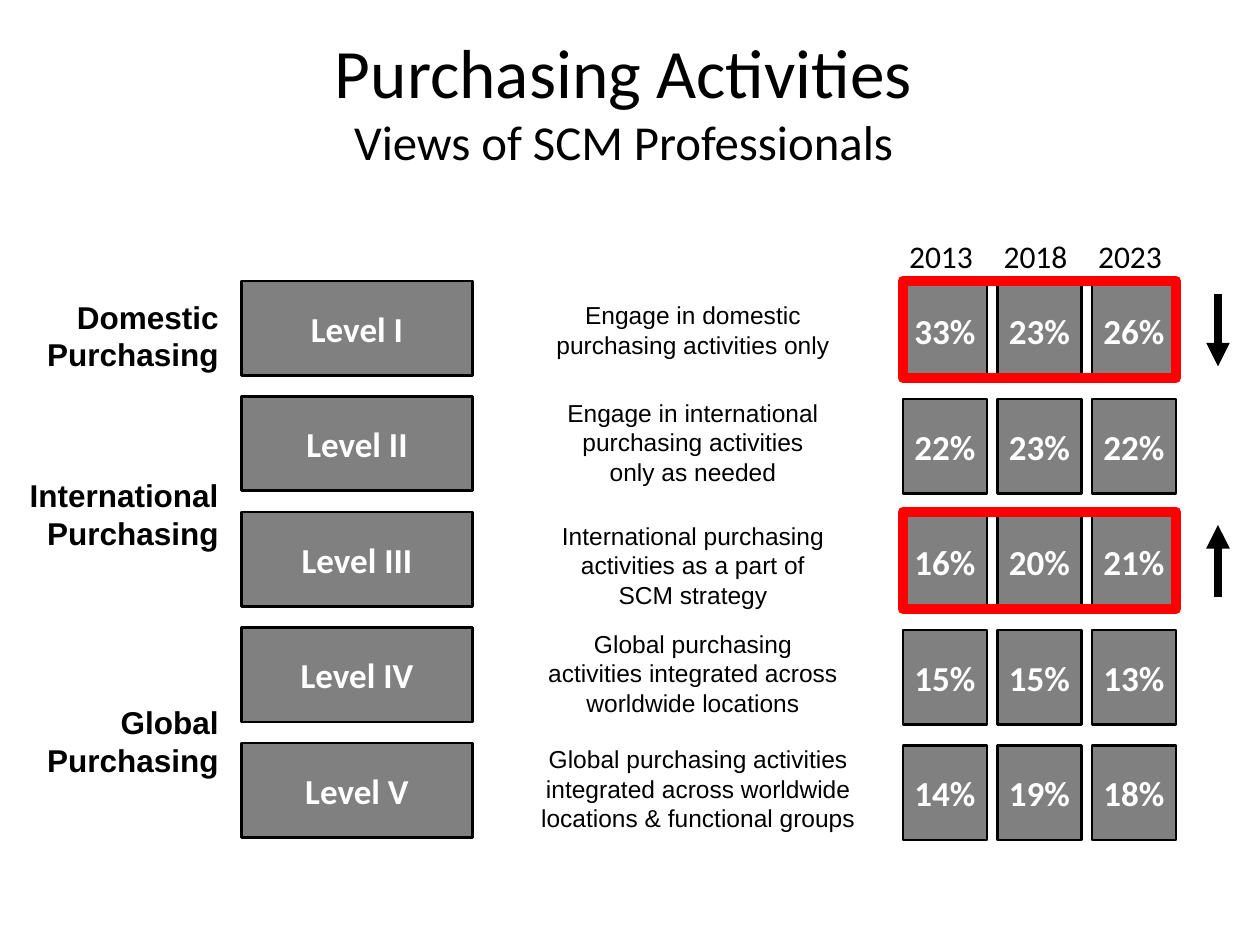
from collections import namedtuple

from lxml.etree import SubElement
from pptx import Presentation
from pptx.dml.color import RGBColor
from pptx.enum.shapes import MSO_CONNECTOR, MSO_SHAPE
from pptx.enum.text import MSO_ANCHOR, PP_ALIGN
from pptx.oxml.ns import qn
from pptx.util import Inches, Pt

Box = namedtuple("Box", "left top width height")

COLORS = {"ink": "000000", "tile": "808080", "tile_text": "FFFFFF", "highlight": "FF0000"}
HEADING_FONT, BODY_FONT = "Calibri", "Arial"

GRID_COLUMNS, GRID_ROWS = 120, 90
SLIDE_WIDTH, SLIDE_HEIGHT = Inches(10), Inches(7.5)
COLUMN, ROW = SLIDE_WIDTH / GRID_COLUMNS, SLIDE_HEIGHT / GRID_ROWS
LEVEL_PITCH, TILE_HEIGHT = 11, 9
YEAR_PITCH, YEAR_WIDTH = 9, 8

YEARS = ["2013", "2018", "2023"]
LEVELS = ["Level I", "Level II", "Level III", "Level IV", "Level V"]
SHARES = [
    ["33%", "23%", "26%"],
    ["22%", "23%", "22%"],
    ["16%", "20%", "21%"],
    ["15%", "15%", "13%"],
    ["14%", "19%", "18%"],
]
DESCRIPTIONS = [
    (1, 32, ["Engage in domestic purchasing activities only"]),
    (-0.7, 32, ["Engage in international", "purchasing activities", "only as needed"]),
    (0, 32, ["International purchasing", "activities as a part of", "SCM strategy"]),
    (-0.7, 32, ["Global purchasing", "activities integrated across", "worldwide locations"]),
    (-0.7, 33, ["Global purchasing activities integrated across worldwide locations & functional groups"]),
]
GROUPS = [(0, "Domestic Purchasing"), (17, "International Purchasing"), (38.6, "Global Purchasing")]
TRENDS = [(0, "down"), (2, "up")]


def color(name):
    return RGBColor.from_string(COLORS[name])


def place(box):
    return (round(box.left * COLUMN), round(box.top * ROW),
            round(box.width * COLUMN), round(box.height * ROW))


def write(frame, lines, size, font, align, ink="ink", bold=False, wrap=True, anchor=MSO_ANCHOR.TOP):
    frame.word_wrap = wrap
    frame.vertical_anchor = anchor
    paragraph = frame.paragraphs[0]
    paragraph.alignment = align
    for index, line in enumerate(lines):
        if index:
            paragraph.add_line_break()
        run = paragraph.add_run()
        run.text = line
        run.font.size = Pt(size[index] if isinstance(size, list) else size)
        run.font.name = font
        run.font.bold = bold
        run.font.color.rgb = color(ink)


def add_label(slide, box, lines, size, font, align, **style):
    write(slide.shapes.add_textbox(*place(box)).text_frame, lines, size, font, align, **style)


def add_rectangle(slide, box, outline, line_width):
    rectangle = slide.shapes.add_shape(MSO_SHAPE.RECTANGLE, *place(box))
    rectangle.shadow.inherit = False
    rectangle.line.color.rgb = color(outline)
    rectangle.line.width = Pt(line_width)
    return rectangle


def add_tile(slide, box, text):
    tile = add_rectangle(slide, box, "ink", 1.5)
    tile.fill.solid()
    tile.fill.fore_color.rgb = color("tile")
    write(tile.text_frame, [text], 20, HEADING_FONT, PP_ALIGN.CENTER, ink="tile_text",
          bold=True, wrap=False, anchor=MSO_ANCHOR.MIDDLE)


def add_title(slide, box):
    add_label(slide, box, ["Purchasing Activities", "Views of SCM Professionals"],
              [39.6, 27.9], HEADING_FONT, PP_ALIGN.CENTER, anchor=MSO_ANCHOR.MIDDLE)


def add_groups(slide, box):
    for offset, group in GROUPS:
        add_label(slide, Box(box.left, box.top + offset, box.width, 8.5), [group],
                  18, BODY_FONT, PP_ALIGN.RIGHT, bold=True)


def add_levels(slide, box):
    for index, level in enumerate(LEVELS):
        add_tile(slide, Box(box.left, box.top + index * LEVEL_PITCH, box.width, TILE_HEIGHT), level)


def add_descriptions(slide, box):
    for index, (offset, width, lines) in enumerate(DESCRIPTIONS):
        top = box.top + index * LEVEL_PITCH + offset
        add_label(slide, Box(box.left, top, width, 9.7), lines, 14, BODY_FONT, PP_ALIGN.CENTER)


def add_shares(slide, box):
    for column, year in enumerate(YEARS):
        left = box.left + column * YEAR_PITCH
        for row, values in enumerate(SHARES):
            top = box.top + row * LEVEL_PITCH
            add_tile(slide, Box(left, top, YEAR_WIDTH, TILE_HEIGHT), values[column])
        add_label(slide, Box(left - 0.6, box.top - 5, 8.5, 4.8), [year], 18,
                  HEADING_FONT, PP_ALIGN.LEFT, wrap=False)


def add_trends(slide, box):
    for row, direction in TRENDS:
        top = box.top + row * LEVEL_PITCH
        frame = add_rectangle(slide, Box(box.left, top - 0.25, 26, 9.25), "highlight", 6)
        frame.fill.background()
        ends = [top + 1, top + 7.9]
        start, end = ends if direction == "down" else reversed(ends)
        across = round((box.left + box.width) * COLUMN)
        arrow = slide.shapes.add_connector(MSO_CONNECTOR.STRAIGHT, across, round(start * ROW),
                                           across, round(end * ROW))
        arrow.line.color.rgb = color("ink")
        arrow.line.width = Pt(4.5)
        SubElement(arrow.line._get_or_add_ln(), qn("a:tailEnd"), type="triangle")
        SubElement(arrow._element.spPr, qn("a:effectLst"))


def main():
    deck = Presentation()
    deck.slide_width, deck.slide_height = SLIDE_WIDTH, SLIDE_HEIGHT
    slide = deck.slides.add_slide(deck.slide_layouts[6])
    add_title(slide, Box(5.4, 2, 108, 15))
    add_groups(slide, Box(0, 27.75, 22, 47))
    add_levels(slide, Box(23, 26.75, 22, 53))
    add_descriptions(slide, Box(50, 27, 33, 53))
    add_shares(slide, Box(86, 27, 26, 53))
    add_trends(slide, Box(86, 27, 30, 53))
    deck.save("out.pptx")


if __name__ == "__main__":
    main()
